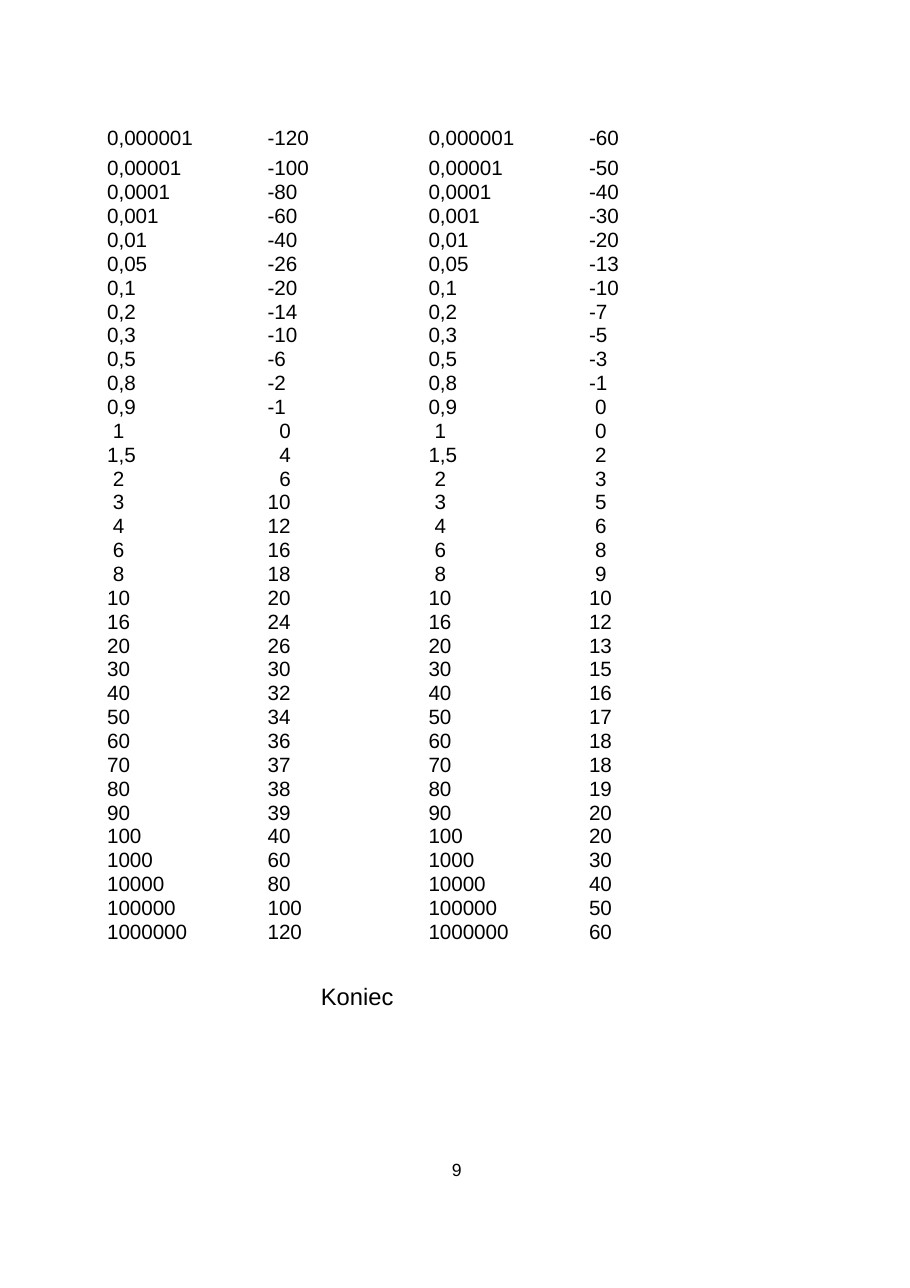
from lxml.etree import SubElement
from pptx import Presentation
from pptx.dml.color import RGBColor
from pptx.oxml.ns import qn
from pptx.util import Cm, Pt

BLACK = RGBColor(0, 0, 0)
FONT = "Arial"
PLAIN_TABLE_STYLE = "{2D5ABB26-0587-4C30-8999-92F81FD0307C}"
COLUMN_WIDTHS = (2.94, 3.18, 4.22, 1.63)
NUMBER_INDENTS = (0.08, 0.84, 1.37, 0.85)
SINGLE_DIGIT_INDENTS = (0.21, 1.11, 1.51, 0.99)
FIRST_ROW_HEIGHT = 0.69
ROW_HEIGHT = 0.55
RATIO_DECIBELS = (
    ("0,000001", -120, -60),
    ("0,00001", -100, -50),
    ("0,0001", -80, -40),
    ("0,001", -60, -30),
    ("0,01", -40, -20),
    ("0,05", -26, -13),
    ("0,1", -20, -10),
    ("0,2", -14, -7),
    ("0,3", -10, -5),
    ("0,5", -6, -3),
    ("0,8", -2, -1),
    ("0,9", -1, 0),
    ("1", 0, 0),
    ("1,5", 4, 2),
    ("2", 6, 3),
    ("3", 10, 5),
    ("4", 12, 6),
    ("6", 16, 8),
    ("8", 18, 9),
    ("10", 20, 10),
    ("16", 24, 12),
    ("20", 26, 13),
    ("30", 30, 15),
    ("40", 32, 16),
    ("50", 34, 17),
    ("60", 36, 18),
    ("70", 37, 18),
    ("80", 38, 19),
    ("90", 39, 20),
    ("100", 40, 20),
    ("1000", 60, 30),
    ("10000", 80, 40),
    ("100000", 100, 50),
    ("1000000", 120, 60),
)


def write_text(holder, text, size=13.5, indent=0, line_spacing=None):
    """Write one line into a cell or text frame at the given left indent."""
    holder.margin_left = Cm(indent)
    holder.margin_top = holder.margin_right = holder.margin_bottom = 0
    frame = getattr(holder, "text_frame", holder)
    paragraph = frame.paragraphs[0]
    paragraph.line_spacing = line_spacing
    run = paragraph.add_run()
    run.text = text
    run.font.name = FONT
    run.font.size = Pt(size)
    run.font.color.rgb = BLACK


def add_label(slide, left, top, width, height, text, **text_format):
    """Place a single-line label in the given box."""
    box = slide.shapes.add_textbox(Cm(left), Cm(top), Cm(width), Cm(height))
    box.text_frame.word_wrap = True
    write_text(box.text_frame, text, **text_format)


def clear_cell(cell):
    """Remove the borders and the fill of a cell."""
    properties = cell._tc.get_or_add_tcPr()
    for side in ("a:lnL", "a:lnR", "a:lnT", "a:lnB"):
        border = SubElement(properties, qn(side), w="0")
        SubElement(border, qn("a:noFill"))
    cell.fill.background()


def add_decibel_table(slide, left, top):
    """Build the table that pairs each ratio with its two decibel values."""
    row_count = len(RATIO_DECIBELS)
    height = FIRST_ROW_HEIGHT + ROW_HEIGHT * (row_count - 1)
    table = slide.shapes.add_table(
        row_count, len(COLUMN_WIDTHS), Cm(left), Cm(top), Cm(sum(COLUMN_WIDTHS)), Cm(height)
    ).table
    table.first_row = table.horz_banding = False
    table._tbl.tblPr.find(qn("a:tableStyleId")).text = PLAIN_TABLE_STYLE
    for column, width in zip(table.columns, COLUMN_WIDTHS):
        column.width = Cm(width)
    for row_index, (ratio, amplitude, power) in enumerate(RATIO_DECIBELS):
        row = table.rows[row_index]
        row.height = Cm(ROW_HEIGHT if row_index else FIRST_ROW_HEIGHT)
        for column_index, value in enumerate((ratio, amplitude, ratio, power)):
            text = str(value)
            indents = SINGLE_DIGIT_INDENTS if len(text) == 1 else NUMBER_INDENTS
            cell = row.cells[column_index]
            clear_cell(cell)
            write_text(cell, text, indent=indents[column_index], line_spacing=Pt(15.5))


def main():
    """Build the page and save it."""
    presentation = Presentation()
    presentation.slide_width = Cm(20.98)
    presentation.slide_height = Cm(29.69)
    slide = presentation.slides.add_slide(presentation.slide_layouts[6])
    add_label(slide, 10.34, 26.72, 0.38, 0.51, "9", size=11.5, indent=0.08)
    add_label(slide, 7.37, 22.64, 1.75, 0.69, "Koniec", size=15.5, indent=0.03)
    add_decibel_table(slide, 2.39, 2.92)
    presentation.save("out.pptx")


if __name__ == "__main__":
    main()
